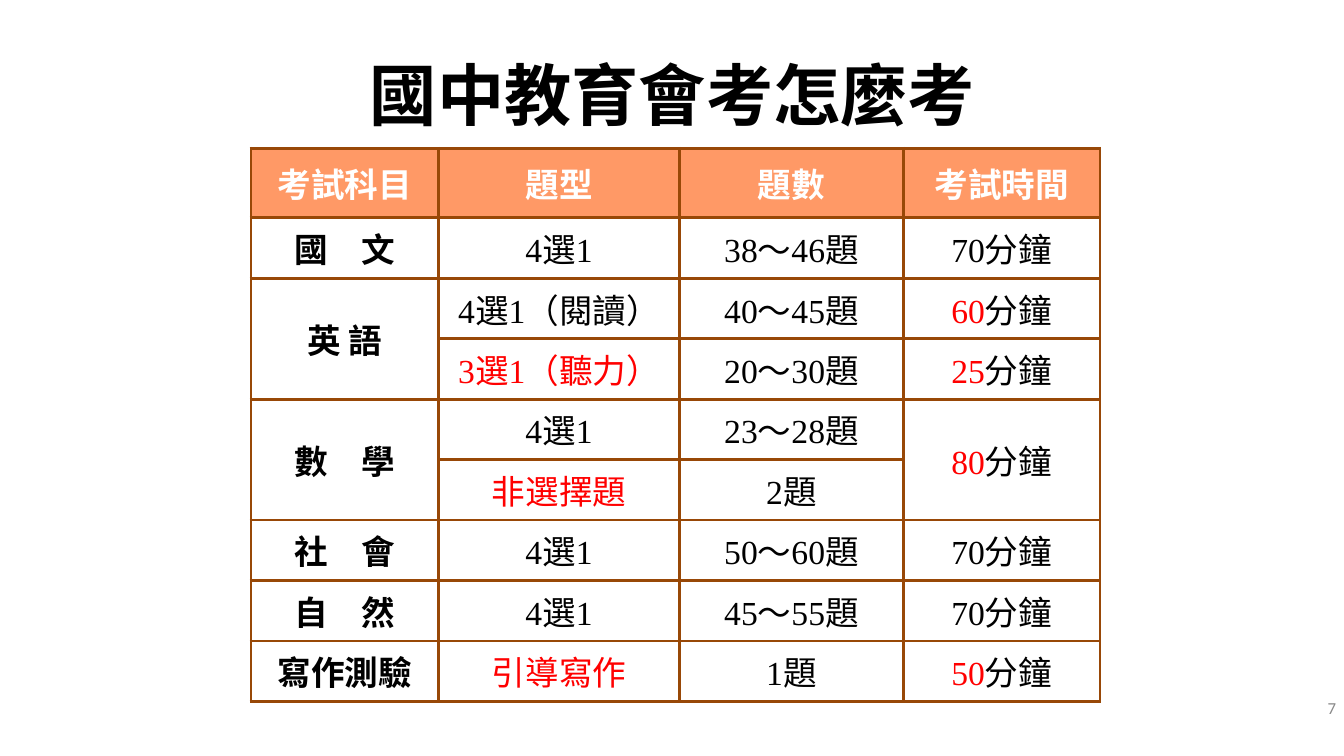
"""Builds the slide on how the junior high exam is held."""
from lxml.etree import SubElement
from pptx import Presentation
from pptx.dml.color import RGBColor
from pptx.enum.text import MSO_ANCHOR, PP_ALIGN
from pptx.oxml.ns import qn
from pptx.util import Inches, Pt

BLACK = RGBColor(0, 0, 0)
WHITE = RGBColor(255, 255, 255)
RED = RGBColor(255, 0, 0)
GREY = RGBColor(0x89, 0x89, 0x89)
ORANGE = RGBColor(0xFF, 0x99, 0x66)
BROWN = RGBColor(0x98, 0x48, 0x07)
HAN = "Noto Sans CJK SC"


def write(frame, text, size=24, font="Times New Roman", color=BLACK,
          bold=False, align=PP_ALIGN.CENTER, marks=()):
    """Fill a frame with runs split at bars; runs listed in marks are red."""
    line = frame.paragraphs[0]
    line.alignment = align
    for part in text.split("|"):
        run = line.add_run()
        run.text = part
        run.font.size = Pt(size)
        run.font.name = font
        run.font.bold = bold
        run.font.color.rgb = RED if part in marks else color
        SubElement(run.font._element, qn("a:ea"), typeface=HAN)


def border(cell):
    """Draw a brown line on each side of a cell."""
    props = cell._tc.get_or_add_tcPr()
    for side in ("lnL", "lnR", "lnT", "lnB"):
        edge = SubElement(props, qn(f"a:{side}"), w=str(Pt(2.25)))
        fill = SubElement(edge, qn("a:solidFill"))
        SubElement(fill, qn("a:srgbClr"), val=str(BROWN))


deck = Presentation()
deck.slide_width, deck.slide_height = Inches(13.33), Inches(7.5)
slide = deck.slides.add_slide(deck.slide_layouts[6])

labels = [
    ((0.67, 0.3, 12, 1.25), "國中教育會考怎麼考",
     dict(size=48, font=HAN, bold=True)),
    ((10.24, 6.82, 3.11, 0.4), "7",
     dict(size=12, font="Calibri", color=GREY, align=PP_ALIGN.RIGHT)),
]
for place, text, style in labels:
    frame = slide.shapes.add_textbox(*map(Inches, place)).text_frame
    frame.word_wrap = True
    frame.vertical_anchor = MSO_ANCHOR.MIDDLE
    write(frame, text, **style)

rows = [
    ("考試科目", "題型", "題數", "考試時間"),
    ("國　文", "4選1", "38～46題", "70分鐘"),
    ("英 語", "4選1（閱讀）", "40～45題", "60|分鐘"),
    ("", "3選1（聽力）", "20～30題", "25|分鐘"),
    ("數　學", "4選1", "23～28題", "80|分鐘"),
    ("", "非選擇題", "2題", ""),
    ("社　會", "4選1", "50～60題", "70分鐘"),
    ("自　然", "4選1", "45～55題", "70分鐘"),
    ("寫作測驗", "引導寫作", "1題", "50|分鐘"),
]
marks = {"60", "25", "80", "50", "3選1（聽力）", "非選擇題", "引導寫作"}
widths = (1.86, 2.39, 2.22, 1.95)
heights = [0.69] + [0.6] * (len(rows) - 1)

table = slide.shapes.add_table(
    len(rows), len(widths), Inches(2.49), Inches(1.47),
    Inches(sum(widths)), Inches(sum(heights))).table
table.first_row = table.horz_banding = False
for col, width in zip(table.columns, widths):
    col.width = Inches(width)
for row, height in zip(table.rows, heights):
    row.height = Inches(height)

for r, row in enumerate(rows):
    for c, text in enumerate(row):
        cell = table.cell(r, c)
        border(cell)
        cell.vertical_anchor = MSO_ANCHOR.MIDDLE
        cell.margin_left = cell.margin_right = Inches(0.02)
        cell.margin_top = cell.margin_bottom = Inches(0.02)
        if r == 0:
            cell.fill.solid()
            cell.fill.fore_color.rgb = ORANGE
        else:
            cell.fill.background()
        if text:
            write(cell.text_frame, text, color=BLACK if r else WHITE,
                  bold=r == 0 or c == 0, marks=marks)
        else:
            table.cell(r - 1, c).merge(cell)

deck.save("out.pptx")
